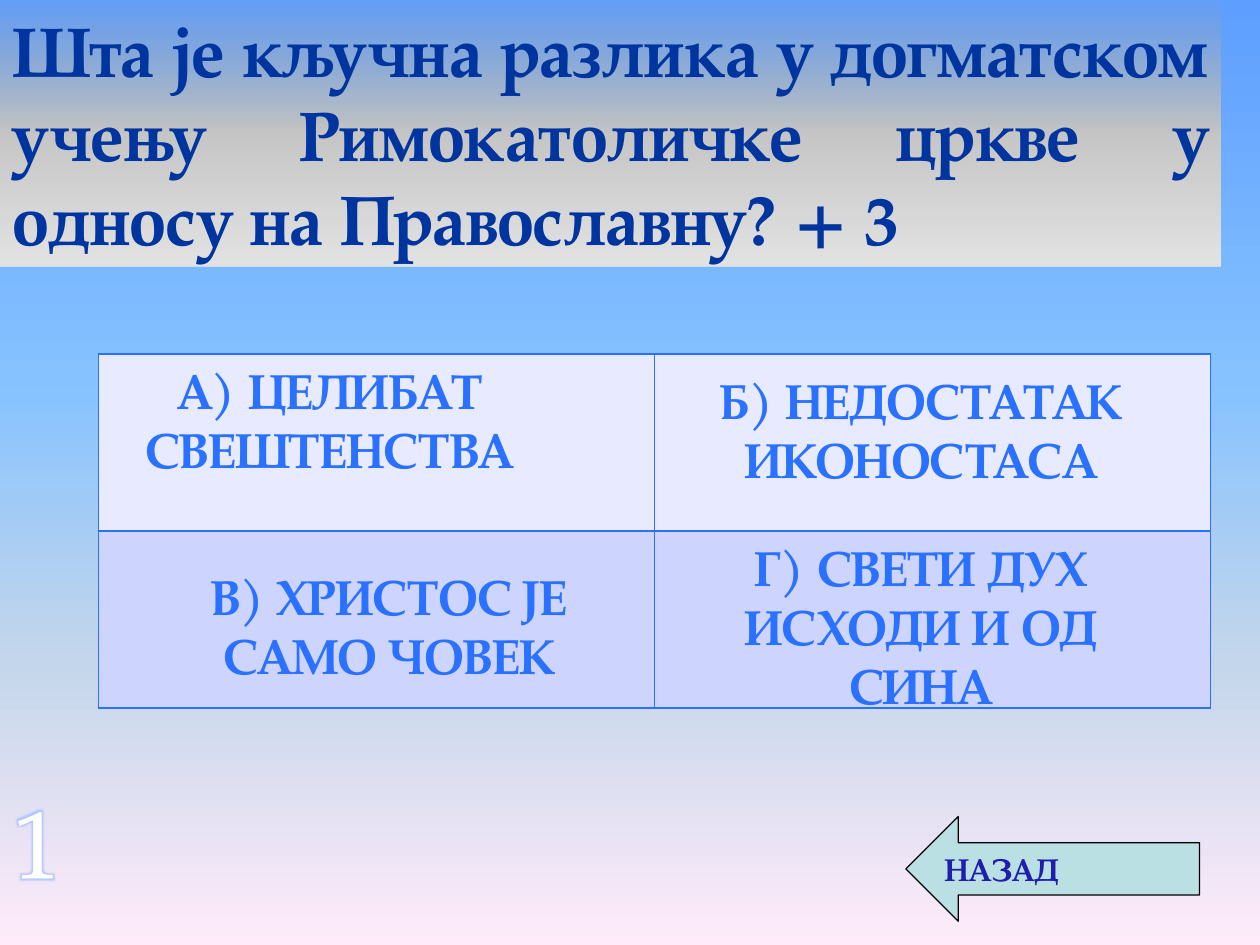
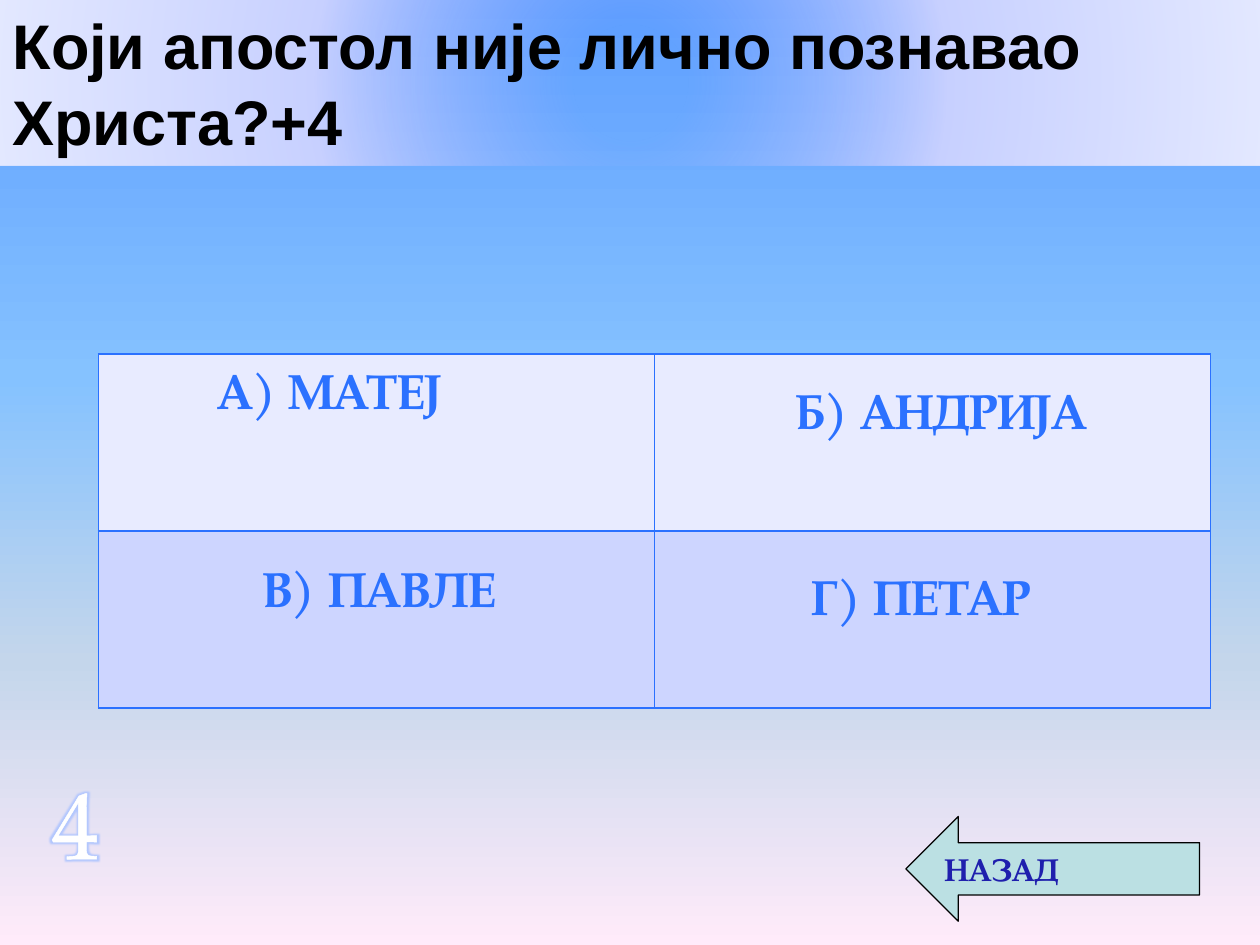
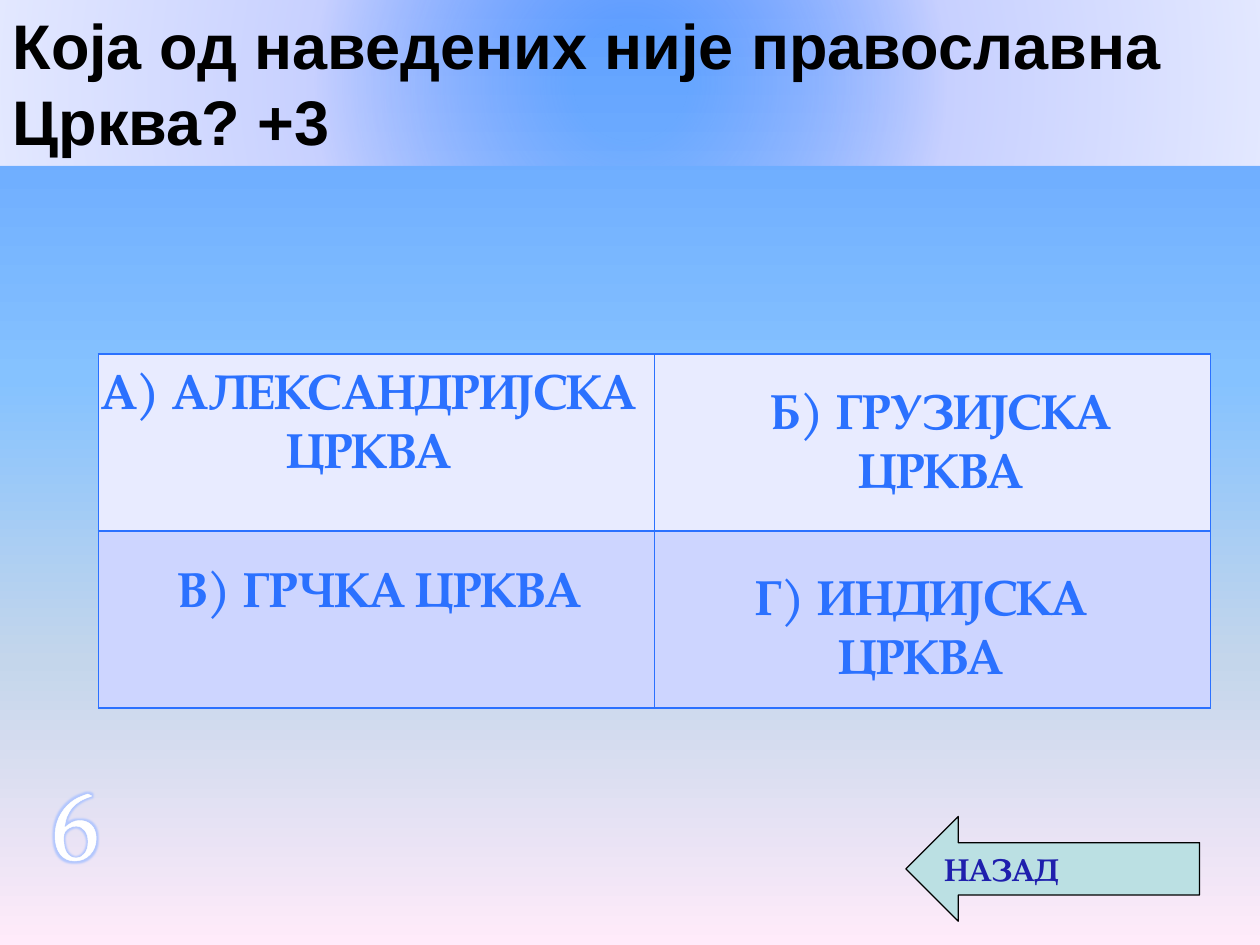
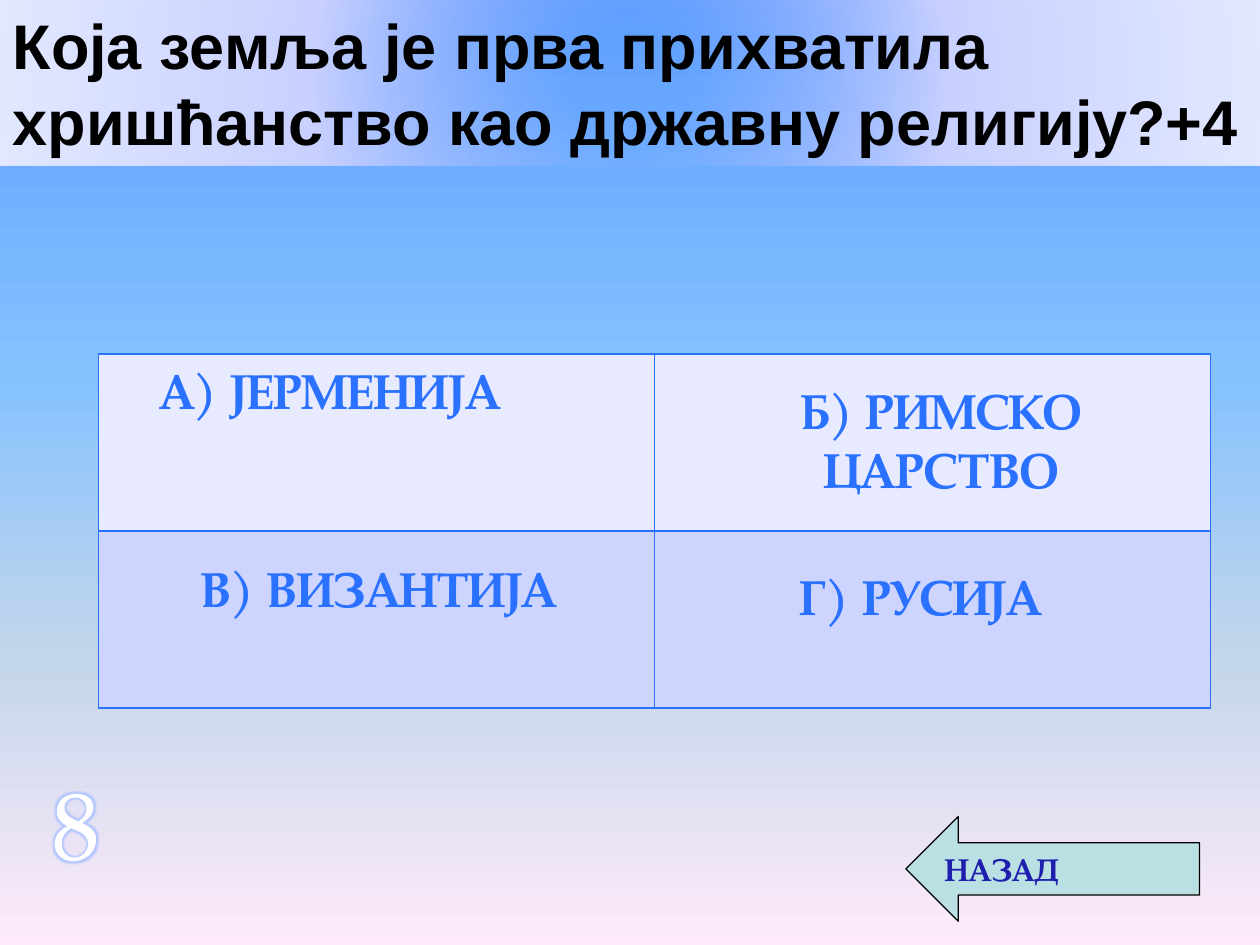
from pptx import Presentation
from pptx.dml.color import RGBColor
from pptx.enum import shapes, text
from pptx.oxml import parse_xml
from pptx.oxml.ns import nsdecls, qn
from pptx.util import Pt

SERIF, SANS = "TeX Gyre Pagella", "Arial"
COLORS = {
    "digit": "FFFFFF", "glow": "B4C8FF", "back fill": "BBE0E3", "back line": "000000",
    "back text": "1F1FAD", "grid": "2B71FF", "answer line": "104ECC",
    "top row": "E8EBFF", "bottom row": "CDD5FF",
    "serif title": "00349E", "sans title": "000000",
}
# Gradient stops: position %, colour, opacity %
SKY = [(0, "5E9EFF", 100), (40, "85C2FF", 100), (70, "C4D6EB", 100), (100, "FFEBFA", 100)]
GREY_BAND = [(0, "A0A0A0", 7), (50, "C5C5C5", 100), (100, "E3E3E3", 100)]
BLUE_BAND = [(9, "A2B3FF", 0), (50, "C7D0FF", 100), (100, "E3E8FF", 100)]
ANSWER_INK = [(0, "003194", 100), (43, "2B71FF", 100), (48, "1763FF", 100), (100, "003194", 100)]

# Title styles: size of the band, gradient, angle (None is radial), font, alignment
TITLES = {
    "serif": dict(width=697.7, height=152.6, stops=GREY_BAND, angle=90, font=SERIF,
                  size=40, align=text.PP_ALIGN.JUSTIFY),
    "sans": dict(width=720, height=94.3, stops=BLUE_BAND, angle=None, font=SANS,
                 size=36, align=text.PP_ALIGN.LEFT),
}

# Answer places: left, top, width
PLACES = [(50.4, 202.3, 275.8), (399.6, 213.8, 275.8),
          (78.5, 315.4, 275.8), (388.1, 320.4, 275.8)]
FIRST_PLACES = [PLACES[0], (388.1, 208.1, 275.8), (84.2, 320.4, 275.8), (388.1, 303.8, 275.8)]
WIDE_PLACES = [(50.4, 202.3, 320.4)] + PLACES[1:]

# Each answer: its paragraphs and the number of lines they take
QUESTIONS = [
    dict(number="1", style="serif", places=FIRST_PLACES, number_at=(0, 444.2),
         title="Шта је кључна разлика у догматском учењу Римокатоличке цркве у односу на Православну? + 3",
         answers=[(["А) ЦЕЛИБАТ СВЕШТЕНСТВА"], 2), (["Б) НЕДОСТАТАК", "ИКОНОСТАСА"], 2),
                  (["В) ХРИСТОС ЈЕ САМО ЧОВЕК"], 2), (["Г) СВЕТИ ДУХ ИСХОДИ И ОД СИНА"], 3)]),
    dict(number="4", style="sans", places=PLACES, number_at=(22.3, 433.4),
         title="Који апостол није лично познавао Христа?+4",
         answers=[(["А) МАТЕЈ"], 1), (["Б) АНДРИЈА"], 1), (["В) ПАВЛЕ"], 1), (["Г) ПЕТАР"], 1)]),
    dict(number="6", style="sans", places=WIDE_PLACES, number_at=(22.3, 433.4),
         title="Која од наведених није православна Црква? +3",
         answers=[(["А) АЛЕКСАНДРИЈСКА ЦРКВА"], 3), (["Б) ГРУЗИЈСКА ЦРКВА"], 2),
                  (["В) ГРЧКА ЦРКВА"], 1), (["Г) ИНДИЈСКА ЦРКВА"], 2)]),
    dict(number="8", style="sans", places=PLACES, number_at=(22.3, 433.4),
         title="Која земља је прва прихватила хришћанство као државну религију?+4",
         answers=[(["А) ЈЕРМЕНИЈА"], 1), (["Б) РИМСКО ЦАРСТВО"], 2),
                  (["В) ВИЗАНТИЈА"], 1), (["Г) РУСИЈА"], 1)]),
]


def color(name):
    return RGBColor.from_string(COLORS[name])


def solid_xml(value, opacity=100):
    return f'<a:srgbClr val="{value}"><a:alpha val="{opacity * 1000}"/></a:srgbClr>'


def set_gradient(fill, holder, stops, angle):
    """Give the fill inside holder these stops, linear or radial."""
    fill.gradient()
    old = next(holder.iter(qn("a:gradFill")))
    marks = "".join(f'<a:gs pos="{at * 1000}">{solid_xml(value, opacity)}</a:gs>'
                    for at, value, opacity in stops)
    if angle is None:
        way = ('<a:path path="circle"><a:fillToRect l="50000" t="50000" '
               'r="50000" b="50000"/></a:path>')
    else:
        way = f'<a:lin ang="{angle * 60000}" scaled="0"/>'
    old.getparent().replace(old, parse_xml(
        f'<a:gradFill {nsdecls("a")} rotWithShape="1"><a:gsLst>{marks}</a:gsLst>{way}</a:gradFill>'))


def line_xml(tag, value, width):
    return parse_xml(f'<a:{tag} {nsdecls("a")} w="{Pt(width)}"><a:solidFill>'
                     f'{solid_xml(value)}</a:solidFill></a:{tag}>')


def outline(span, name, width):
    span._r.get_or_add_rPr().insert(0, line_xml("ln", COLORS[name], width))


def write(para, words, font, size, bold, align, ink=None):
    span = para.add_run()
    span.text = words
    para.alignment = align
    para.font.name, para.font.size, para.font.bold = font, Pt(size), bold
    if ink:
        para.font.color.rgb = color(ink)
    return span


def add_box(page, left, top, width, height, wrap=True):
    frame = page.shapes.add_textbox(Pt(left), Pt(top), Pt(width), Pt(height)).text_frame
    frame.word_wrap = wrap
    frame.auto_size = text.MSO_AUTO_SIZE.SHAPE_TO_FIT_TEXT
    return frame


def add_title(page, words, style):
    look = TITLES[style]
    title = page.shapes.title
    title.left, title.top = Pt(0), Pt(0)
    title.width, title.height = Pt(look["width"]), Pt(look["height"])
    set_gradient(title.fill, title._element, look["stops"], look["angle"])
    frame = title.text_frame
    frame.vertical_anchor = text.MSO_ANCHOR.MIDDLE
    frame.auto_size = text.MSO_AUTO_SIZE.SHAPE_TO_FIT_TEXT
    write(frame.paragraphs[0], words, look["font"], look["size"], True,
          look["align"], style + " title")


def add_number(page, number, left, top):
    frame = add_box(page, left, top, 41.8, 72.7, wrap=False)
    span = write(frame.paragraphs[0], number, SERIF, 54, False, text.PP_ALIGN.CENTER, "digit")
    outline(span, "digit", 1.45)
    span._r.get_or_add_rPr().append(parse_xml(
        f'<a:effectLst {nsdecls("a")}><a:glow rad="{Pt(4)}">'
        f'{solid_xml(COLORS["glow"])}</a:glow></a:effectLst>'))


def add_back_arrow(page):
    arrow = page.shapes.add_shape(shapes.MSO_SHAPE.LEFT_ARROW,
                                  Pt(517.7), Pt(466.6), Pt(167.8), Pt(59.8))
    arrow.shadow.inherit = False
    arrow.fill.solid()
    arrow.fill.fore_color.rgb = color("back fill")
    arrow.line.color.rgb = color("back line")
    arrow.line.width = Pt(0.75)
    span = write(arrow.text_frame.paragraphs[0], "НАЗАД", SERIF, 18, True,
                 text.PP_ALIGN.LEFT, "back text")
    outline(span, "back text", 1.42)


def add_grid(page):
    table = page.shapes.add_table(2, 2, Pt(56.2), Pt(202.3), Pt(635.6), Pt(202.4)).table
    table.first_row = table.horz_banding = False
    for row, name in zip(table.rows, ("top row", "bottom row")):
        for cell in row.cells:
            cell.fill.solid()
            cell.fill.fore_color.rgb = color(name)
            for place, side in enumerate(("lnL", "lnR", "lnT", "lnB")):
                cell._tc.get_or_add_tcPr().insert(place, line_xml(side, COLORS["grid"], 1))


def add_answer(page, paragraphs, lines, place):
    frame = add_box(page, *place, 7.2 + 33.9 * lines)
    for index, words in enumerate(paragraphs):
        para = frame.add_paragraph() if index else frame.paragraphs[0]
        span = write(para, words, SERIF, 28, True, text.PP_ALIGN.CENTER)
        set_gradient(span.font.fill, span._r, ANSWER_INK, 90)
        outline(span, "answer line", 0.71)


def main():
    deck = Presentation()
    deck.slide_width, deck.slide_height = Pt(720), Pt(540)
    master = deck.slide_master
    set_gradient(master.background.fill, master._element, SKY, 90)
    for question in QUESTIONS:
        page = deck.slides.add_slide(deck.slide_layouts.get_by_name("Title Only"))
        add_title(page, question["title"], question["style"])
        add_number(page, question["number"], *question["number_at"])
        add_back_arrow(page)
        add_grid(page)
        for (paragraphs, lines), place in zip(question["answers"], question["places"]):
            add_answer(page, paragraphs, lines, place)
    deck.save("out.pptx")


if __name__ == "__main__":
    main()
